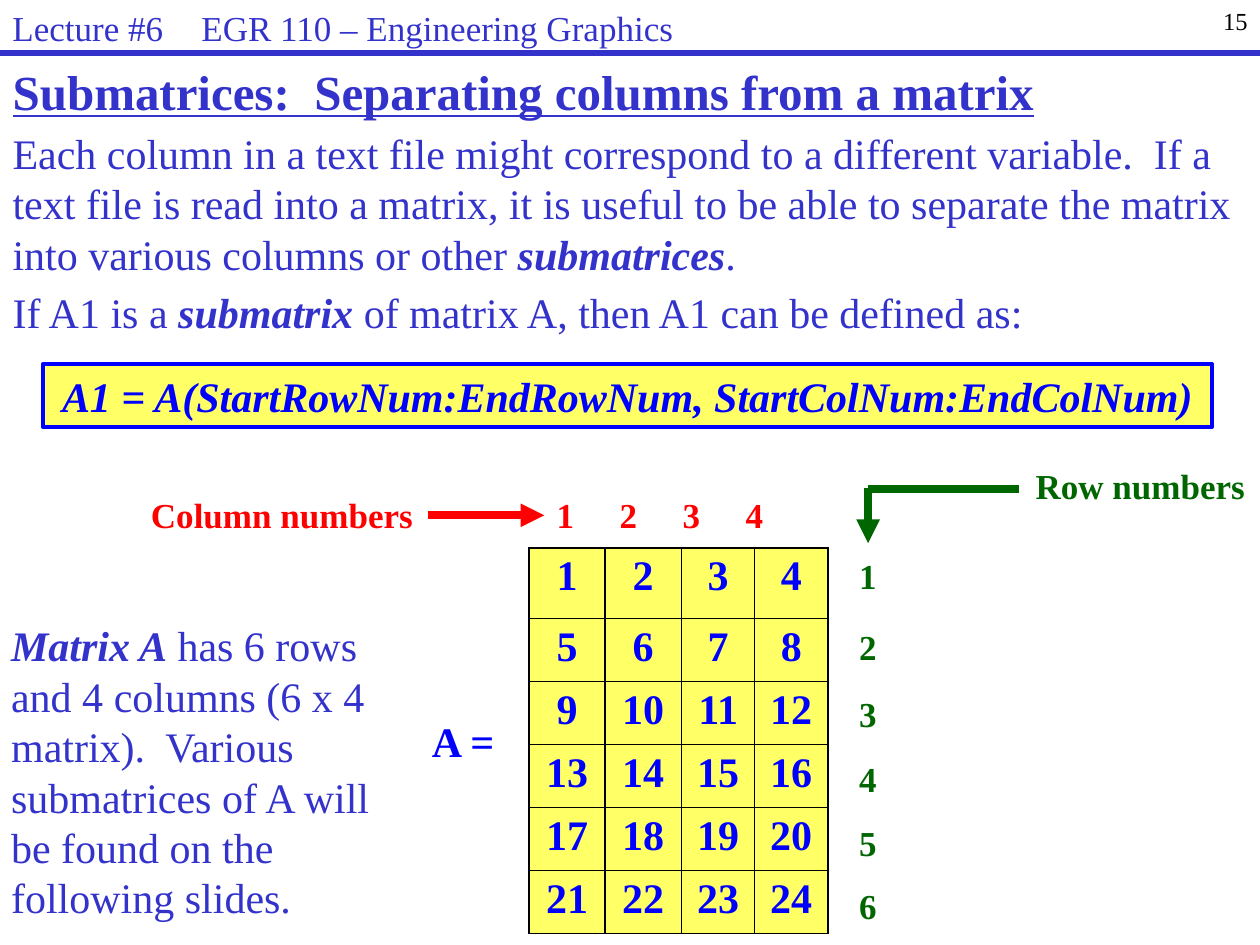
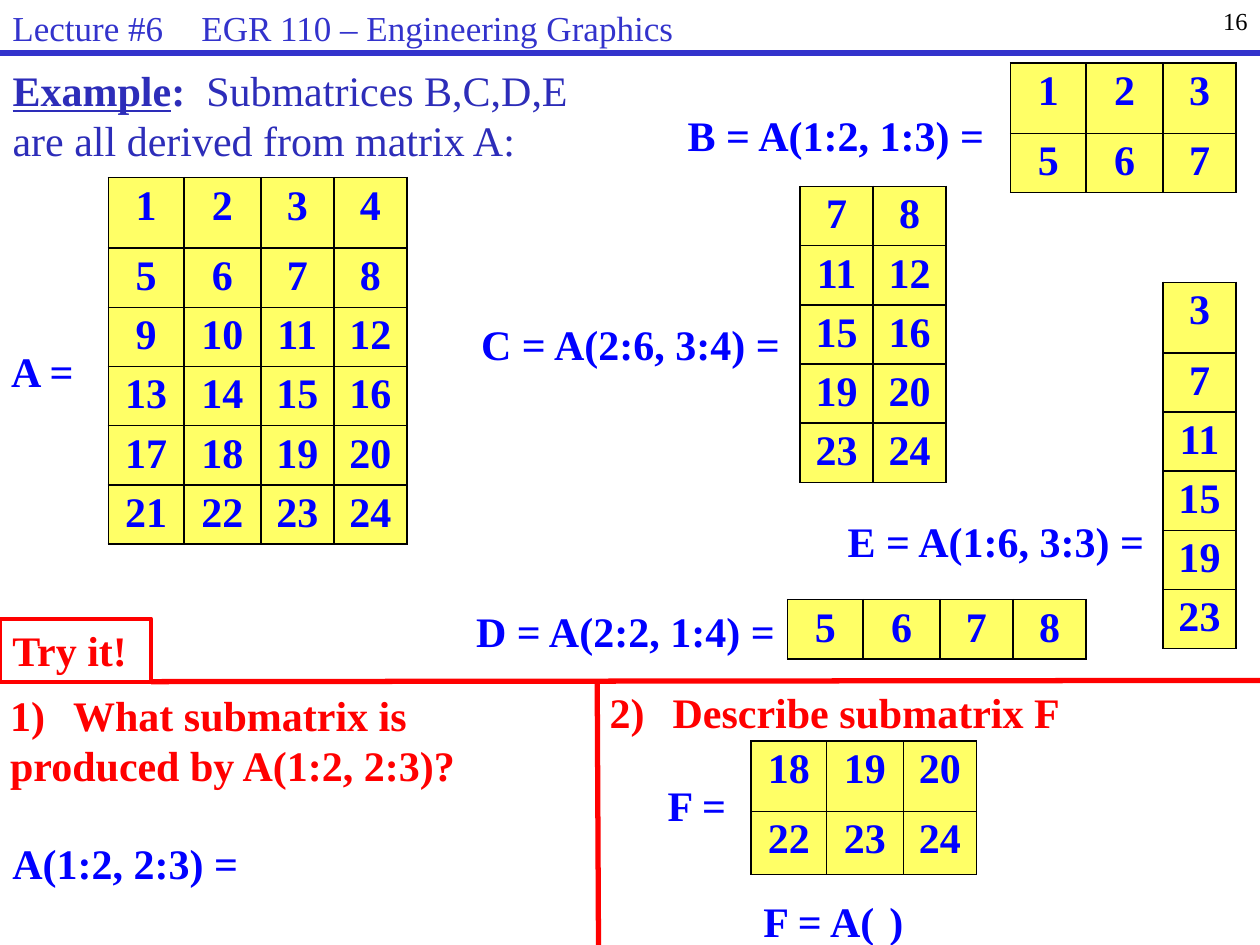
from dataclasses import dataclass

from lxml.etree import SubElement
from pptx import Presentation
from pptx.dml.color import RGBColor
from pptx.enum.shapes import MSO_CONNECTOR as Connector, MSO_SHAPE as Preset
from pptx.enum.text import MSO_ANCHOR as Anchor, MSO_AUTO_SIZE as AutoSize, PP_ALIGN as Align
from pptx.oxml.ns import qn
from pptx.util import Pt

EMU_PER_PX = 9144
COLUMN_WIDTHS = [60, 61, 58, 58]
MATRIX = [[4 * row + column + 1 for column in range(4)] for row in range(6)]


@dataclass(frozen=True)
class Theme:
    """Colours, font and type sizes of the lecture."""

    font: str = "Times New Roman"
    indigo: str = "3333CC"
    deep_indigo: str = "2D2DB9"
    blue: str = "0000FF"
    yellow: str = "FFFF66"
    red: str = "FF0000"
    green: str = "006600"
    black: str = "000000"
    title: int = 28
    body: int = 24
    label: int = 20
    page: int = 14


THEME = Theme()


def px(length):
    """Turn px into EMU."""
    return length * EMU_PER_PX


def rgb(colour):
    """Turn a hex string into a colour."""
    return RGBColor.from_string(colour)


def submatrix(first_row, last_row, first_column, last_column):
    """Cut a block out of the matrix, counting from one."""
    return [row[first_column - 1:last_column] for row in MATRIX[first_row - 1:last_row]]


def set_list_style(paragraph, number, tabs):
    """Number the paragraph or leave it plain, and set its tab stops."""
    properties = paragraph._p.get_or_add_pPr()
    properties.set("marL", str(px(50 if number else 0)))
    properties.set("indent", str(px(-50 if number else 0)))
    if number:
        SubElement(properties, qn("a:buAutoNum"), type="arabicParenR", startAt=str(number))
    else:
        SubElement(properties, qn("a:buNone"))
    if tabs:
        stops = SubElement(properties, qn("a:tabLst"))
        for position in tabs:
            SubElement(stops, qn("a:tab"), pos=str(px(position)), algn="l")


def write(frame, *paragraphs, size=THEME.body, colour=THEME.blue, bold=False, align=Align.LEFT,
          before=(), number=None, tabs=()):
    """Fill a text frame with paragraphs, each a string or a list of (text, styles) runs."""
    for index, content in enumerate(paragraphs):
        paragraph = frame.add_paragraph() if index else frame.paragraphs[0]
        paragraph.alignment = align
        paragraph.space_before = Pt(before[index] if index < len(before) else 0)
        set_list_style(paragraph, None if index else number, tabs)
        runs = [(content, "b" if bold else "")] if isinstance(content, str) else content
        for text, styles in runs:
            run = paragraph.add_run()
            run.text = text
            font = run.font
            font.name, font.size = THEME.font, Pt(size)
            font.color.rgb = rgb(colour)
            font.bold, font.italic, font.underline = (key in styles for key in "biu")


class Deck:
    """Holds the presentation, its style and the current slide."""

    def __init__(self, theme):
        self.theme = theme
        self.presentation = Presentation()
        self.presentation.slide_width, self.presentation.slide_height = px(1000), px(750)
        self.slide = None

    def new_slide(self, page):
        """Start a slide with the lecture header, its rule and the page number."""
        theme = self.theme
        self.slide = self.presentation.slides.add_slide(self.presentation.slide_layouts[1])
        self.text((792, 0, 208, 50), page, size=theme.page, colour=theme.black, align=Align.RIGHT)
        self.line((0, 42), (1000, 42), theme.indigo, 3)
        self.text((0, 0, 792, 42), "Lecture #6\tEGR 110 – Engineering Graphics",
                  size=theme.label, colour=theme.indigo, before=[4], tabs=[161])

    def placeholder(self, index, box, *paragraphs, **style):
        """Move and fill a template placeholder."""
        shape = self.slide.placeholders[index]
        shape.left, shape.top, shape.width, shape.height = map(px, box)
        frame = shape.text_frame
        frame.auto_size, frame.vertical_anchor = AutoSize.NONE, Anchor.TOP
        write(frame, *paragraphs, **style)

    def text(self, box, *paragraphs, wrap=True, **style):
        """Add a text box."""
        frame = self.slide.shapes.add_textbox(*map(px, box)).text_frame
        frame.word_wrap = wrap
        write(frame, *paragraphs, **style)

    def label(self, left, top, width, text, height=50, **style):
        """Add a bold one-line label."""
        self.text((left, top, width, height), text, wrap=False, bold=True, **style)

    def frame(self, box, content, line, fill=None, **style):
        """Add a bordered rectangle with text."""
        shape = self.slide.shapes.add_shape(Preset.RECTANGLE, *map(px, box))
        shape.shadow.inherit = False
        if fill:
            shape.fill.solid()
            shape.fill.fore_color.rgb = rgb(fill)
        else:
            shape.fill.background()
        shape.line.color.rgb, shape.line.width = rgb(line), Pt(2.25)
        shape.text_frame.word_wrap = False
        shape.text_frame.vertical_anchor = Anchor.TOP
        write(shape.text_frame, content, **style)

    def line(self, start, end, colour, width, arrow=False):
        """Add a straight line, with an arrowhead at its end if asked."""
        line = self.slide.shapes.add_connector(Connector.STRAIGHT, *map(px, start + end))
        line.line.color.rgb, line.line.width = rgb(colour), Pt(width)
        if arrow:
            SubElement(line.line._get_or_add_ln(), qn("a:tailEnd"), type="triangle")
        SubElement(line._element.spPr, qn("a:effectLst"))

    def matrix(self, left, top, values, first_row=56, row=47):
        """Add a matrix as a ruled yellow table."""
        count = len(values[0])
        widths = COLUMN_WIDTHS[:count] if count > 2 else [58] * count
        heights = [first_row] + [row] * (len(values) - 1)
        table = self.slide.shapes.add_table(len(values), count, *map(
            px, (left, top, sum(widths), sum(heights)))).table
        for column, width in zip(table.columns, widths):
            column.width = px(width)
        for table_row, height, numbers in zip(table.rows, heights, values):
            table_row.height = px(height)
            for cell, number in zip(table_row.cells, numbers):
                self.cell(cell, str(number))

    def cell(self, cell, text):
        """Rule, fill and write one matrix cell."""
        cell.margin_left = cell.margin_right = px(5)
        cell.margin_top, cell.margin_bottom = px(4), px(2)
        properties = cell._tc.get_or_add_tcPr()
        for side in "LRTB":
            border = SubElement(properties, qn(f"a:ln{side}"), w=str(Pt(1)))
            SubElement(SubElement(border, qn("a:solidFill")), qn("a:srgbClr"), val=self.theme.black)
        cell.fill.solid()
        cell.fill.fore_color.rgb = rgb(self.theme.yellow)
        write(cell.text_frame, text, bold=True, align=Align.CENTER)


def build_submatrices(deck):
    """Explain submatrices with a labelled matrix."""
    theme = deck.theme
    deck.new_slide("15")
    deck.placeholder(0, (0, 44, 1000, 55), [("Submatrices:  Separating columns from a matrix", "bu")],
                     size=theme.title, colour=theme.indigo, before=[5.6])
    deck.placeholder(1, (0, 96, 1000, 168), [
        ("Each column in a text file might correspond to a different variable.  If a text file is "
         "read into a matrix, it is useful to be able to separate the matrix into various columns "
         "or other ", ""), ("submatrices", "bi"), (".", "")],
        [("If A1 is a ", ""), ("submatrix", "bi"), (" of matrix A, then A1 can be defined as:", "")],
        colour=theme.indigo, before=[4.8, 4.8])
    deck.frame((34, 289, 928, 50), [("A1 = A(StartRowNum:EndRowNum, StartColNum:EndColNum)", "bi")],
               theme.blue, theme.yellow, align=Align.CENTER)
    deck.matrix(420, 435, MATRIX, row=50)
    deck.label(333, 563, 87, "A =")

    columns = {"size": theme.label, "colour": theme.red, "height": 44}
    rows = {"size": theme.label, "colour": theme.green}
    deck.label(432, 387, 224, "1\t2\t3\t4", tabs=[63, 125, 180], **columns)
    deck.label(110, 387, 230, "Column numbers", **columns)
    deck.line((340, 409), (432, 409), theme.red, 4.5, arrow=True)
    deck.text((672, 435, 34, 315), *"123456", wrap=False, bold=True,
              before=[0, 16.8, 14.4, 12.6, 12.6, 12], **rows)
    deck.label(812, 364, 188, "Row numbers", height=44, **rows)
    deck.line((689, 387), (689, 431), theme.green, 4.5, arrow=True)
    deck.line((689, 388), (809, 388), theme.green, 4.5)
    deck.text((-1, 487, 334, 252), [
        ("Matrix A", "bi"), (" has 6 rows and 4 columns (6 x 4 matrix).  Various submatrices of A "
                             "will be found on the following slides.", "")], colour=theme.indigo)


def build_example(deck):
    """Show submatrices of A and two exercises."""
    theme = deck.theme
    deck.new_slide("16")
    deck.placeholder(0, (0, 46, 480, 91),
                     [("Example", "bu"), (":  ", "b"), ("Submatrices B,C,D,E", "")],
                     "are all derived from matrix A:", colour=theme.deep_indigo)
    deck.matrix(86, 141, MATRIX)
    deck.matrix(802, 50, submatrix(1, 2, 1, 3))
    deck.matrix(635, 148, submatrix(2, 6, 3, 4), first_row=47)
    deck.matrix(625, 476, submatrix(2, 2, 1, 4), first_row=47)
    deck.matrix(923, 224, submatrix(1, 6, 3, 3))
    deck.matrix(596, 588, submatrix(5, 6, 2, 4), row=50)
    for left, top, width, text in [
        (-1, 269, 87, "A ="),
        (536, 82, 274, "B = A(1:2, 1:3) ="),
        (372, 248, 276, "C = A(2:6, 3:4) ="),
        (368, 476, 276, "D = A(2:2, 1:4) ="),
        (663, 404, 274, "E = A(1:6, 3:3) ="),
        (520, 614, 84, "F ="),
        (0, 660, 210, "A(1:2, 2:3) ="),
    ]:
        deck.label(left, top, width, text)
    deck.label(596, 706, 328, "F = A(\t)", tabs=[296])

    exercise = {"colour": theme.red, "bold": True}
    deck.placeholder(1, (-2, 542, 400, 91), "What submatrix is", "produced by A(1:2, 2:3)?",
                     number=1, **exercise)
    deck.text((474, 540, 449, 50), "Describe submatrix F", number=2, **exercise)
    deck.frame((0, 491, 120, 50), "Try it!", theme.red, **exercise)
    deck.line((120, 541), (1000, 540), theme.red, 3)
    deck.line((474, 541), (475, 750), theme.red, 3)


def main():
    """Build and save the presentation."""
    deck = Deck(THEME)
    build_submatrices(deck)
    build_example(deck)
    deck.presentation.save("out.pptx")


if __name__ == "__main__":
    main()
